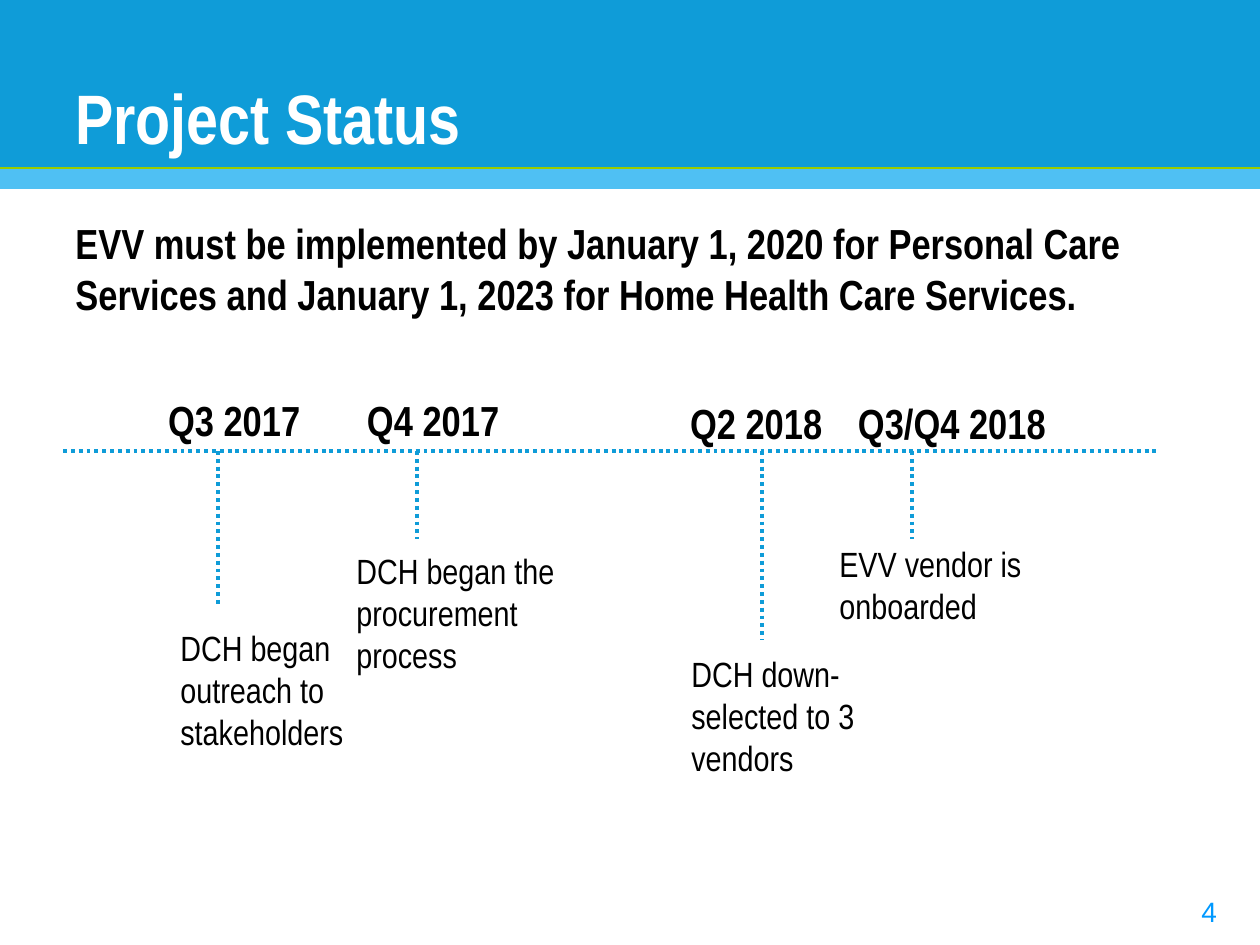
from pptx import Presentation
from pptx.dml.color import RGBColor
from pptx.enum.dml import MSO_LINE
from pptx.enum.shapes import MSO_CONNECTOR, MSO_SHAPE
from pptx.enum.text import MSO_ANCHOR
from pptx.util import Pt
from lxml import etree

SCALE = 914400 / 126
WIDE, HIGH = 1260, 945
BLUE, SKY, LIME = "0F9CD8", "4FC0F3", "99CC00"
NARROW = "Arial Narrow"
A_NS = "{http://schemas.openxmlformats.org/drawingml/2006/main}"


def emu(*px):
    return [round(n * SCALE) for n in px]


def color(code):
    return RGBColor.from_string(code)


class Deck:
    def __init__(self):
        self.file = Presentation()
        self.file.slide_width, self.file.slide_height = emu(WIDE, HIGH)
        self.slide = self.file.slides.add_slide(self.file.slide_layouts[6])

    def band(self, top, high, fill):
        box = self.slide.shapes.add_shape(
            MSO_SHAPE.RECTANGLE, *emu(0, top, WIDE, high))
        box.shadow.inherit = False
        box.fill.solid()
        box.fill.fore_color.rgb = color(fill)
        box.line.fill.background()

    def line(self, x1, y1, x2, y2, tint=BLUE, width=2.25, dash=MSO_LINE.ROUND_DOT):
        rule = self.slide.shapes.add_connector(
            MSO_CONNECTOR.STRAIGHT, *emu(x1, y1, x2, y2))
        rule.line.color.rgb = color(tint)
        rule.line.width = Pt(width)
        rule.line.dash_style = dash
        etree.SubElement(rule._element.spPr, A_NS + "effectLst")

    def text(self, words, place, size, bold=False, tint="000000",
             face=NARROW, anchor=MSO_ANCHOR.TOP, side=None):
        box = self.slide.shapes.add_textbox(*emu(*place))
        frame = box.text_frame
        frame.word_wrap = True
        frame.vertical_anchor = anchor
        if side is not None:
            frame.margin_left = frame.margin_right = side
        frame.text = words
        font = frame.paragraphs[0].runs[0].font
        font.name, font.size, font.bold = face, Pt(size), bold
        font.color.rgb = color(tint)


def main():
    deck = Deck()

    # Header bands and page number
    deck.band(0, 168, BLUE)
    deck.band(168, 21, SKY)
    deck.line(0, 168, WIDE, 168, LIME, 1.5, MSO_LINE.SOLID)
    deck.text("4", (1189, 888, 59, 47), 16, tint="0099FF", face="Arial")

    # Title and lead
    deck.text("Project Status", (63, 38, 1134, 158), 40, True, "FFFFFF",
              anchor=MSO_ANCHOR.MIDDLE)
    deck.text("EVV must be implemented by January 1, 2020 for Personal Care "
              "Services and January 1, 2023 for Home Health Care Services.",
              (63, 237, 1155, 88), 24, True, anchor=MSO_ANCHOR.BOTTOM)

    # Time axis
    axis = 451
    deck.line(63, axis, 1159, axis)

    # Events: quarter, its left and top, stem x and end, note, its left, top, width
    events = [
        ("Q3 2017", 168, 388, 218, 604,
         "DCH began outreach to stakeholders", 168, 620, 228),
        ("Q4 2017", 367, 388, 417, 539,
         "DCH began the procurement process", 344, 543, 228),
        ("Q2 2018", 690, 391, 762, 640,
         "DCH down-selected to 3 vendors", 679, 646, 252),
        ("Q3/Q4 2018", 858, 391, 912, 539,
         "EVV vendor is onboarded", 827, 536, 228),
    ]
    for quarter, left, top, stem, end, note, x, y, wide in events:
        deck.text(quarter, (left, top, 220, 51), 24, True, side=0)
        deck.line(stem, axis, stem, end)
        deck.text(note, (x, y, wide, 140), 20)

    deck.file.save("out.pptx")


if __name__ == "__main__":
    main()
